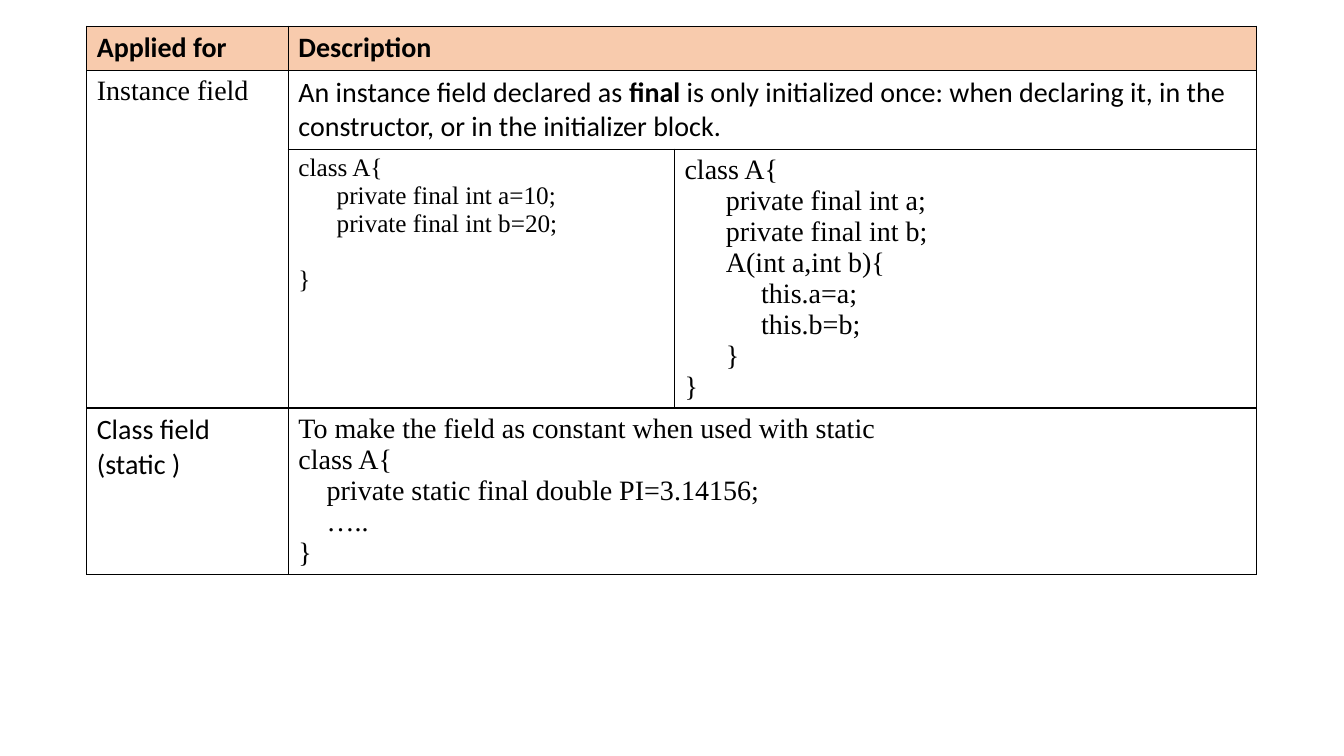
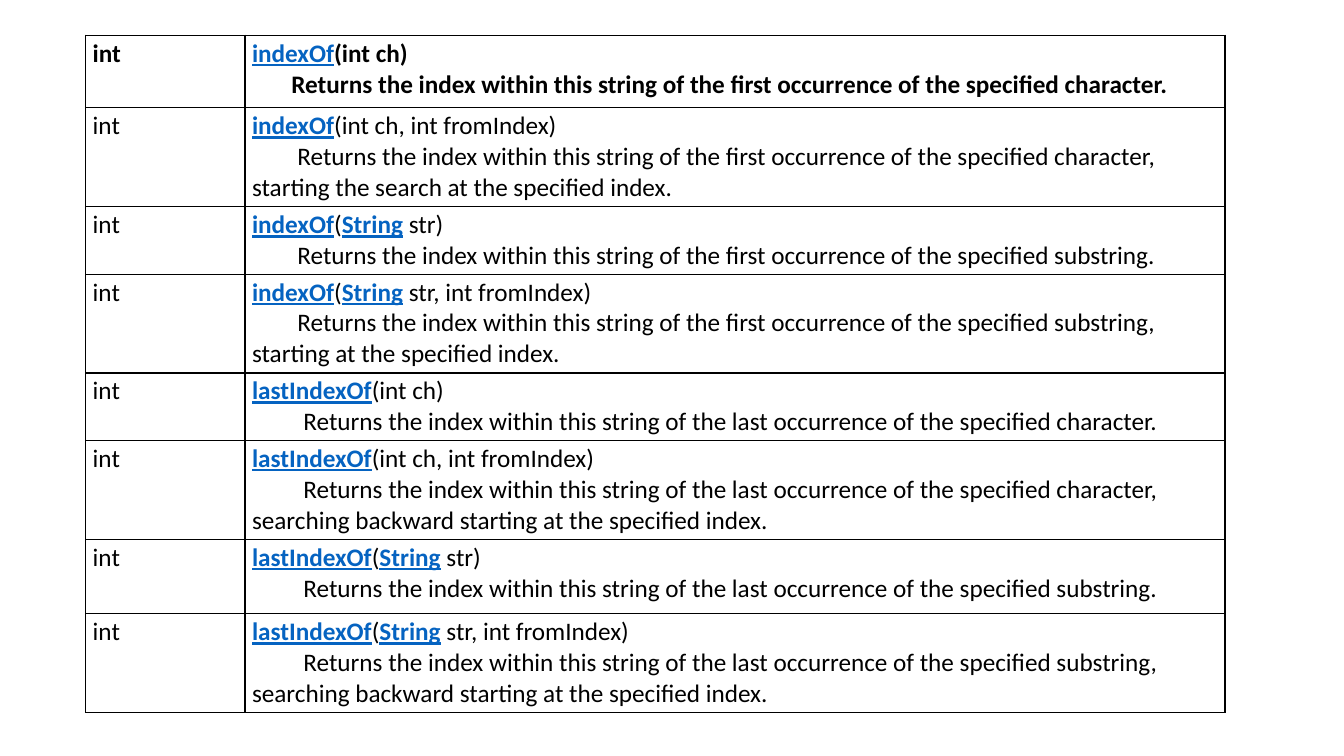
"""Build two table slides: uses of final fields, and the string index methods."""
from lxml import etree
from pptx import Presentation
from pptx.dml.color import RGBColor
from pptx.enum.text import MSO_ANCHOR
from pptx.oxml.ns import qn
from pptx.util import Inches, Pt

TOP = MSO_ANCHOR.TOP
BLACK = RGBColor(0x00, 0x00, 0x00)
WHITE = RGBColor(0xFF, 0xFF, 0xFF)
PEACH = RGBColor(0xF8, 0xCB, 0xAD)
LINK_BLUE = RGBColor(0x05, 0x63, 0xC1)
SANS, SERIF = "Calibri", "Times New Roman"
PLAIN, BOLD, LINK = "plain", "bold", "link"


def add_grid(slide, left, top, widths, heights):
    """Add a plain white table with thin black borders."""
    frame = slide.shapes.add_table(
        len(heights), len(widths), Inches(left), Inches(top),
        Inches(sum(widths)), Inches(sum(heights)))
    table = frame.table
    table.first_row = table.horz_banding = False
    for column, width in zip(table.columns, widths):
        column.width = Inches(width)
    for row, height in zip(table.rows, heights):
        row.height = Inches(height)
    for cell in table.iter_cells():
        properties = cell._tc.get_or_add_tcPr()
        for side in ("a:lnL", "a:lnR", "a:lnT", "a:lnB"):
            line = etree.SubElement(properties, qn(side), w=str(Pt(1)))
            fill = etree.SubElement(line, qn("a:solidFill"))
            etree.SubElement(fill, qn("a:srgbClr"), val=str(BLACK))
        cell.fill.solid()
        cell.fill.fore_color.rgb = WHITE
        cell.vertical_anchor = TOP
    return table


def write_cell(cell, lines, font=SANS, size=20):
    """Write lines, each a first-line indent and a list of styled pieces."""
    frame = cell.text_frame
    for number, (indent, pieces) in enumerate(lines):
        para = frame.add_paragraph() if number else frame.paragraphs[0]
        if indent:
            para._p.get_or_add_pPr().set("indent", str(Inches(indent)))
        for text, style in pieces:
            span = para.add_run()
            span.text = text
            span.font.name = font
            span.font.size = Pt(size)
            span.font.bold = style != PLAIN
            span.font.underline = style == LINK
            span.font.color.rgb = LINK_BLUE if style == LINK else BLACK


deck = Presentation()
deck.slide_width, deck.slide_height = Inches(13.33), Inches(7.5)
blank = deck.slide_layouts[6]

fields = add_grid(deck.slides.add_slide(blank), 0.86, 0.26,
                  [2, 3.83, 5.77], [0.44, 0.78, 2.56, 1.65])
for row in (0, 1, 3):
    fields.cell(row, 1).merge(fields.cell(row, 2))
fields.cell(1, 0).merge(fields.cell(2, 0))
for column, heading in enumerate(("Applied for", "Description")):
    write_cell(fields.cell(0, column), [(0, [(heading, BOLD)])])
for cell in fields.rows[0].cells:
    cell.fill.fore_color.rgb = PEACH

write_cell(fields.cell(1, 0), [(0, [("Instance field", PLAIN)])], SERIF)
write_cell(fields.cell(1, 1), [(0, [
    ("An instance field declared as ", PLAIN),
    ("final", BOLD),
    (" is only initialized once: when declaring it, in the constructor, "
     "or in the initializer block.", PLAIN)])])
write_cell(fields.cell(3, 0), [(0, [("Class field (static )", PLAIN)])])

CODE = [
    (2, 1, 18, [(0, "class A{"), (0.38, "private final int a=10;"),
                (0.38, "private final int b=20;"), (0, "}")]),
    (2, 2, 20, [(0, "class A{"), (0.41, "private final int a;"),
                (0.41, "private final int b;"), (0.41, "A(int a,int b){"),
                (0.76, "this.a=a;"), (0.76, "this.b=b;"), (0.41, "}"), (0, "}")]),
    (3, 1, 20, [(0, "To make the field as constant when used with static"),
                (0, "class A{"),
                (0.28, "private static final double PI=3.14156;"),
                (0.28, "….."), (0, "}")]),
]
for row, column, size, lines in CODE:
    write_cell(fields.cell(row, column),
               [(indent, [(text, PLAIN)]) for indent, text in lines], SERIF, size)
fields.cell(2, 1).text_frame.paragraphs[-1].space_before = Pt(20)

FIRST = "Returns the index within this string of the first occurrence of the specified "
LAST = FIRST.replace("first", "last")
BACKWARD = ", searching backward starting at the specified index."
METHODS = [
    (0.72, "indexOf", "", "int ch)", 0.39, FIRST + "character."),
    (0.98, "indexOf", "", "int ch, int fromIndex)", 0.45,
     FIRST + "character, starting the search at the specified index."),
    (0.67, "indexOf", "String", " str)", 0.45, FIRST + "substring."),
    (0.98, "indexOf", "String", " str, int fromIndex)", 0.45,
     FIRST + "substring, starting at the specified index."),
    (0.67, "lastIndexOf", "", "int ch)", 0.51, LAST + "character."),
    (0.98, "lastIndexOf", "", "int ch, int fromIndex)", 0.51,
     LAST + "character" + BACKWARD),
    (0.74, "lastIndexOf", "String", " str)", 0.51, LAST + "substring."),
    (0.98, "lastIndexOf", "String", " str, int fromIndex)", 0.51,
     LAST + "substring" + BACKWARD),
]
methods = add_grid(deck.slides.add_slide(blank), 0.85, 0.35,
                   [1.58, 9.72], [method[0] for method in METHODS])
for cell in methods.iter_cells():
    cell.margin_left = Inches(0.07)
    cell.margin_right = cell.margin_top = cell.margin_bottom = Inches(0.03)
for row, (_, name, linked_type, arguments, indent, description) in enumerate(METHODS):
    style = PLAIN if row else BOLD
    if linked_type:
        signature = [(name, LINK), ("(", style), (linked_type, LINK), (arguments, style)]
    else:
        signature = [(name, LINK), ("(" + arguments, style)]
    write_cell(methods.cell(row, 0), [(0, [("int", style)])], size=18)
    write_cell(methods.cell(row, 1),
               [(0, signature), (indent, [(description, style)])], size=18)

deck.save("out.pptx")
